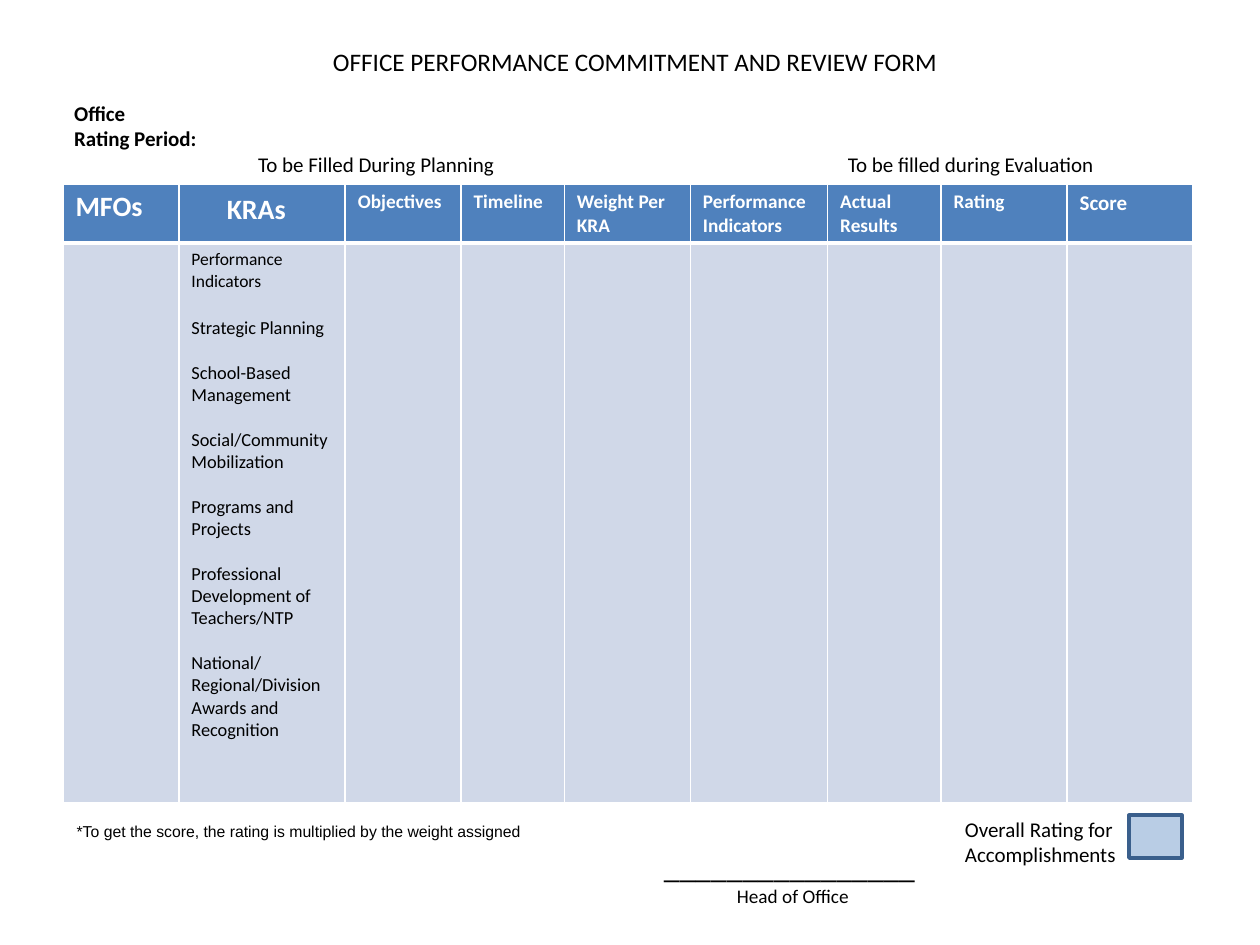
from dataclasses import dataclass

from lxml import etree
from pptx import Presentation
from pptx.dml.color import RGBColor as RGB
from pptx.enum.shapes import MSO_SHAPE as SHAPE
from pptx.enum.text import MSO_ANCHOR as ANCHOR, PP_ALIGN as ALIGN
from pptx.oxml import parse_xml
from pptx.oxml.ns import nsdecls, qn
from pptx.util import Inches, Pt


@dataclass(frozen=True)
class Theme:
    font: str = "Calibri"
    note_font: str = "Arial"
    ink: str = "000000"
    paper: str = "FFFFFF"
    header: str = "4F81BD"
    body: str = "D0D8E8"
    box: str = "B9CDE5"
    box_line: str = "3A5F8C"
    title: float = 14.4
    heading: float = 16
    label: float = 12
    small: float = 11
    item: float = 10.5
    first_item: float = 10
    note: float = 9
    rule: float = 18
    thin: float = 1
    thick: float = 3


class FormSlide:
    COLS, ROWS = 100, 75

    def __init__(self, prs, theme):
        self.theme = theme
        self.slide = prs.slides.add_slide(prs.slide_layouts[6])
        self.col = prs.slide_width / self.COLS
        self.row = prs.slide_height / self.ROWS

    def x(self, cols):
        return round(cols * self.col)

    def y(self, rows):
        return round(rows * self.row)

    def place(self, left, top, width, height):
        return self.x(left), self.y(top), self.x(width), self.y(height)

    def style(self, p, size, bold=False, color=None, font=None):
        for r in p.runs:
            r.font.size = Pt(size)
            r.font.bold = bold
            r.font.name = font or self.theme.font
            r.font.color.rgb = RGB.from_string(color or self.theme.ink)

    def text(self, box, lines, font=None, align=ALIGN.LEFT, anchor=ANCHOR.TOP):
        tf = self.slide.shapes.add_textbox(*self.place(*box)).text_frame
        tf.word_wrap = True
        tf.vertical_anchor = anchor
        tf.text = "\n".join(line for line, _, _ in lines)
        for p, (_, size, bold) in zip(tf.paragraphs, lines):
            p.alignment = align
            self.style(p, size, bold, font=font)
        return tf.paragraphs

    def indent(self, p, cols):
        p._p.get_or_add_pPr().set("marL", str(self.x(cols)))

    def tabs(self, p, stops):
        tab_list = etree.SubElement(p._p.get_or_add_pPr(), qn("a:tabLst"))
        for stop in stops:
            etree.SubElement(tab_list, qn("a:tab"), pos=str(self.x(stop)), algn="l")

    def rect(self, box, fill, line, weight):
        sp = self.slide.shapes.add_shape(SHAPE.RECTANGLE, *self.place(*box))
        sp.shadow.inherit = False
        sp.fill.solid()
        sp.fill.fore_color.rgb = RGB.from_string(fill)
        sp.line.color.rgb = RGB.from_string(line)
        sp.line.width = Pt(weight)

    def cell(self, cell, fill, top, bottom):
        t = self.theme
        sides = {"L": t.thin, "R": t.thin, "T": top, "B": bottom}
        for side, weight in sides.items():
            cell._tc.get_or_add_tcPr().append(parse_xml(
                f'<a:ln{side} {nsdecls("a")} w="{Pt(weight)}"><a:solidFill>'
                f'<a:srgbClr val="{t.paper}"/></a:solidFill></a:ln{side}>'))
        cell.fill.solid()
        cell.fill.fore_color.rgb = RGB.from_string(fill)

    def table(self, left, top, widths, heights, headers):
        t = self.theme
        box = self.place(left, top, sum(widths), sum(heights))
        table = self.slide.shapes.add_table(len(heights), len(widths), *box).table
        for column, width in zip(table.columns, widths):
            column.width = self.x(width)
        for row, height in zip(table.rows, heights):
            row.height = self.y(height)
        for i, (label, size) in enumerate(headers):
            head, body = table.cell(0, i), table.cell(1, i)
            self.cell(head, t.header, t.thin, t.thick)
            self.cell(body, t.body, t.thick, t.thin)
            head.text_frame.text = label
            self.style(head.text_frame.paragraphs[0], size, True, t.paper)
        return table

    def items(self, cell, items):
        t = self.theme
        tf = cell.text_frame
        tf.text = "\n".join(items)
        for i, p in enumerate(tf.paragraphs):
            self.style(p, t.item if i else t.first_item)
            if i:
                p.space_before = Pt(14.6 if i == 1 else 12.8)


def main():
    prs = Presentation()
    prs.slide_width, prs.slide_height = Inches(10), Inches(7.5)
    t = Theme()
    s = FormSlide(prs, t)

    s.text((5.8, 3, 89.2, 3.7),
           [("OFFICE PERFORMANCE COMMITMENT AND REVIEW FORM", t.title, False)],
           align=ALIGN.CENTER, anchor=ANCHOR.MIDDLE)

    headers = [("MFOs", t.heading), ("KRAs", t.heading), ("Objectives", t.small),
               ("Timeline", t.small), ("Weight Per KRA", t.small),
               ("Performance Indicators", t.small), ("Actual Results", t.small),
               ("Rating", t.small), ("Score", t.label)]
    widths = [9.2, 13.2, 9.2, 8.2, 10, 10.9, 9, 10, 10]
    table = s.table(5, 14.6, widths, [4.7, 44.4], headers)
    kras = table.cell(0, 1)
    kras.margin_left, kras.margin_top = s.x(3.8), s.y(0.7)
    s.items(table.cell(1, 1), [
        "Performance Indicators", "Strategic Planning", "School-Based Management",
        "Social/Community Mobilization", "Programs and Projects",
        "Professional Development of Teachers/NTP",
        "National/Regional/Division Awards and Recognition"])

    phases = s.text((4.9, 7.5, 90, 7.1), [
        ("Office", t.label, True), ("Rating Period:", t.label, True),
        ("\tTo be Filled During Planning\tTo be filled during Evaluation",
         t.label, False)])[-1]
    s.tabs(phases, [14.6, 61.4])

    s.text((75.6, 64.3, 18.2, 5),
           [("Overall Rating for Accomplishments", t.label, False)])
    s.text((5.1, 64.7, 40.8, 2.5),
           [("*To get the score, the rating is multiplied by the weight assigned",
             t.note, False)], font=t.note_font)
    signature = s.text((51.7, 66.7, 42.5, 5.9), [
        ("_" * 16, t.rule, False), ("Head of Office", t.small, False)])
    s.indent(signature[-1], 5.8)
    s.rect((89.6, 64.7, 4.2, 3.4), t.box, t.box_line, 2)

    prs.save("out.pptx")


if __name__ == "__main__":
    main()
